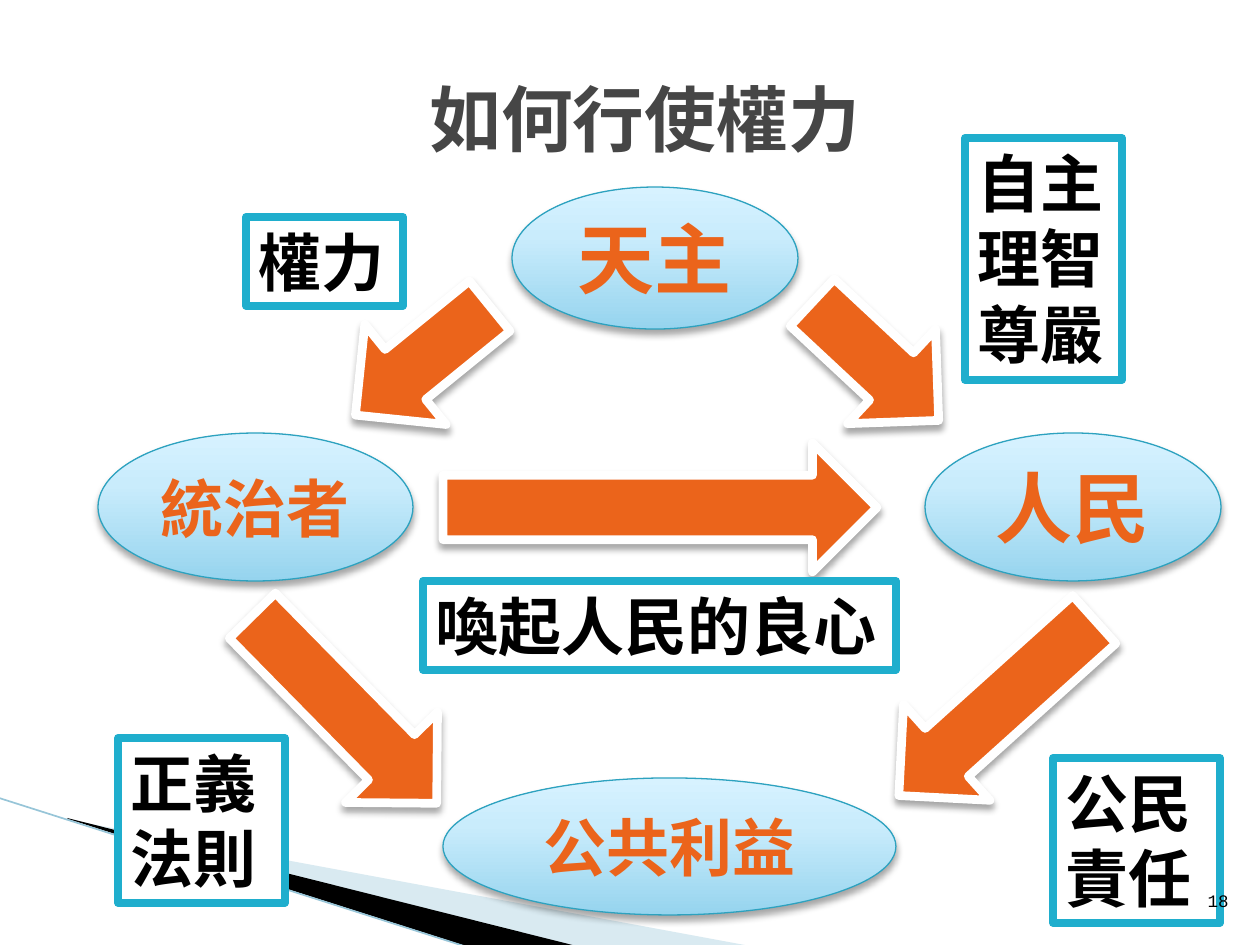
from lxml.etree import SubElement
from pptx import Presentation
from pptx.dml.color import RGBColor
from pptx.enum.shapes import MSO_CONNECTOR, MSO_SHAPE
from pptx.enum.text import MSO_ANCHOR, MSO_AUTO_SIZE, PP_ALIGN
from pptx.oxml.ns import qn
from pptx.util import Emu, Pt

PX = 914400 / 126
FONT = "Courier New"
ORANGE = RGBColor(0xEB, 0x64, 0x1B)
TEAL = RGBColor(0x2D, 0xA2, 0xBF)
BRIGHT_TEAL = RGBColor(0x1F, 0xAE, 0xCD)
PALE_BLUE = RGBColor(0xA0, 0xCB, 0xDC)
LINE_BLUE = RGBColor(0x97, 0xC5, 0xD8)
GRAY = RGBColor(0x46, 0x46, 0x46)
BLACK = RGBColor(0, 0, 0)
WHITE = RGBColor(0xFF, 0xFF, 0xFF)
BUBBLE_STOPS = [
    (0, RGBColor(0x96, 0xD4, 0xEE)),
    (65, RGBColor(0xC9, 0xEC, 0xFC)),
    (100, RGBColor(0xD7, 0xF2, 0xFF)),
]

BUBBLES = [
    ("天主", 44, (512, 187, 286, 142)),
    ("公共利益", 36, (443, 778, 453, 137)),
    ("人民", 44, (925, 433, 296, 148)),
    ("統治者", 36, (98, 433, 315, 148)),
]
ARROWS = [
    ((336, 296, 173, 129), 140.9),
    ((789, 297, 173, 129), 43),
    ((443, 443, 434, 129), 0),
    ((213, 645, 263, 129), 45.5),
    ((865, 643, 263, 129), 138),
]
LABELS = [
    (["權力"], (246, 217, 157, 89)),
    (["自主", "理智尊嚴"], (965, 138, 157, 242)),
    (["喚起人民的良心"], (423, 581, 473, 89)),
    (["正義", "法則"], (118, 738, 167, 165)),
    (["公民責任"], (1053, 758, 167, 165)),
]


def px(value):
    return Emu(round(value * PX))


def write(shape, lines, size, color, bold=True, align=PP_ALIGN.LEFT,
          anchor=MSO_ANCHOR.TOP):
    frame = shape.text_frame
    frame.word_wrap = True
    frame.vertical_anchor = anchor
    frame.text = "\n".join(lines)
    for para in frame.paragraphs:
        para.alignment = align
        para.font.name = FONT
        para.font.size = Pt(size)
        para.font.bold = bold
        para.font.color.rgb = color


def add_color(parent, color, alpha=None):
    node = SubElement(parent, qn("a:srgbClr"), val=str(color))
    if alpha is not None:
        SubElement(node, qn("a:alpha"), val=str(alpha * 1000))


def cast_shadow(shape):
    effects = shape._element.spPr.find(qn("a:effectLst"))
    shadow = SubElement(effects, qn("a:outerShdw"), blurRad=str(Pt(4)),
                        dist=str(Pt(3)), dir="5400000", rotWithShape="0")
    add_color(shadow, BLACK, 35)


def fill_gradient(shape, stops):
    """Give a bottom-to-top gradient with any number of stops."""
    shape.fill.gradient()
    gradient = shape._element.spPr.find(qn("a:gradFill"))
    for child in list(gradient):
        gradient.remove(child)
    stop_list = SubElement(gradient, qn("a:gsLst"))
    for position, color in stops:
        add_color(SubElement(stop_list, qn("a:gs"), pos=str(position * 1000)), color)
    SubElement(gradient, qn("a:lin"), ang="16200000", scaled="0")


def add_outlined(page, kind, place, line_color, line_width, fill=None):
    shape = page.shapes.add_shape(kind, *map(px, place))
    shape.shadow.inherit = False
    if fill is not None:
        shape.fill.solid()
        shape.fill.fore_color.rgb = fill
    shape.line.color.rgb = line_color
    shape.line.width = Pt(line_width)
    return shape


def add_bubble(page, text, size, place):
    bubble = add_outlined(page, MSO_SHAPE.OVAL, place, TEAL, 0.75)
    fill_gradient(bubble, BUBBLE_STOPS)
    cast_shadow(bubble)
    write(bubble, [text], size, ORANGE, align=PP_ALIGN.CENTER,
          anchor=MSO_ANCHOR.MIDDLE)


def add_arrow(page, place, rotation):
    arrow = add_outlined(page, MSO_SHAPE.RIGHT_ARROW, place, WHITE, 5, ORANGE)
    arrow.rotation = rotation
    cast_shadow(arrow)


def add_label(page, lines, place):
    label = add_outlined(page, MSO_SHAPE.RECTANGLE, place, BRIGHT_TEAL, 4.33, WHITE)
    write(label, lines, 36, BLACK)
    label.text_frame.auto_size = MSO_AUTO_SIZE.SHAPE_TO_FIT_TEXT


def add_text(page, text, place, size, color, **style):
    box = page.shapes.add_textbox(*map(px, place))
    write(box, [text], size, color, **style)


def add_wedge(page, points, color, alpha=None):
    builder = page.shapes.build_freeform(*points[0], scale=PX)
    builder.add_line_segments(points[1:], close=True)
    wedge = builder.convert_to_shape()
    wedge.shadow.inherit = False
    wedge.fill.solid()
    wedge.fill.fore_color.rgb = color
    wedge.line.fill.background()
    if alpha is not None:
        node = wedge._element.spPr.find(qn("a:solidFill"))[0]
        SubElement(node, qn("a:alpha"), val=str(alpha * 1000))


def add_line(page, start, end, color, width):
    line = page.shapes.add_connector(MSO_CONNECTOR.STRAIGHT,
                                     *map(px, start + end))
    line.line.color.rgb = color
    line.line.width = Pt(width)
    SubElement(line._element.spPr, qn("a:effectLst"))


def main():
    deck = Presentation()
    deck.slide_width, deck.slide_height = px(1260), px(945)
    page = deck.slides.add_slide(deck.slide_layouts[6])

    add_wedge(page, [(69, 820), (750, 946), (575, 946), (69, 819)], PALE_BLUE, 40)
    add_wedge(page, [(67, 818), (576, 946), (469, 947), (68, 819)], BLACK)
    add_line(page, (-1, 798), (467, 947), LINE_BLUE, 0.95)

    add_text(page, "如何行使權力", (78, 39, 1134, 158), 41, GRAY,
             align=PP_ALIGN.CENTER, anchor=MSO_ANCHOR.MIDDLE)
    for text, size, place in BUBBLES:
        add_bubble(page, text, size, place)
    for place, rotation in ARROWS:
        add_arrow(page, place, rotation)
    for lines, place in LABELS:
        add_label(page, lines, place)
    add_text(page, "18", (1191, 867, 50, 50), 10, BLACK, bold=False,
             align=PP_ALIGN.RIGHT, anchor=MSO_ANCHOR.BOTTOM)

    deck.save("out.pptx")


if __name__ == "__main__":
    main()
